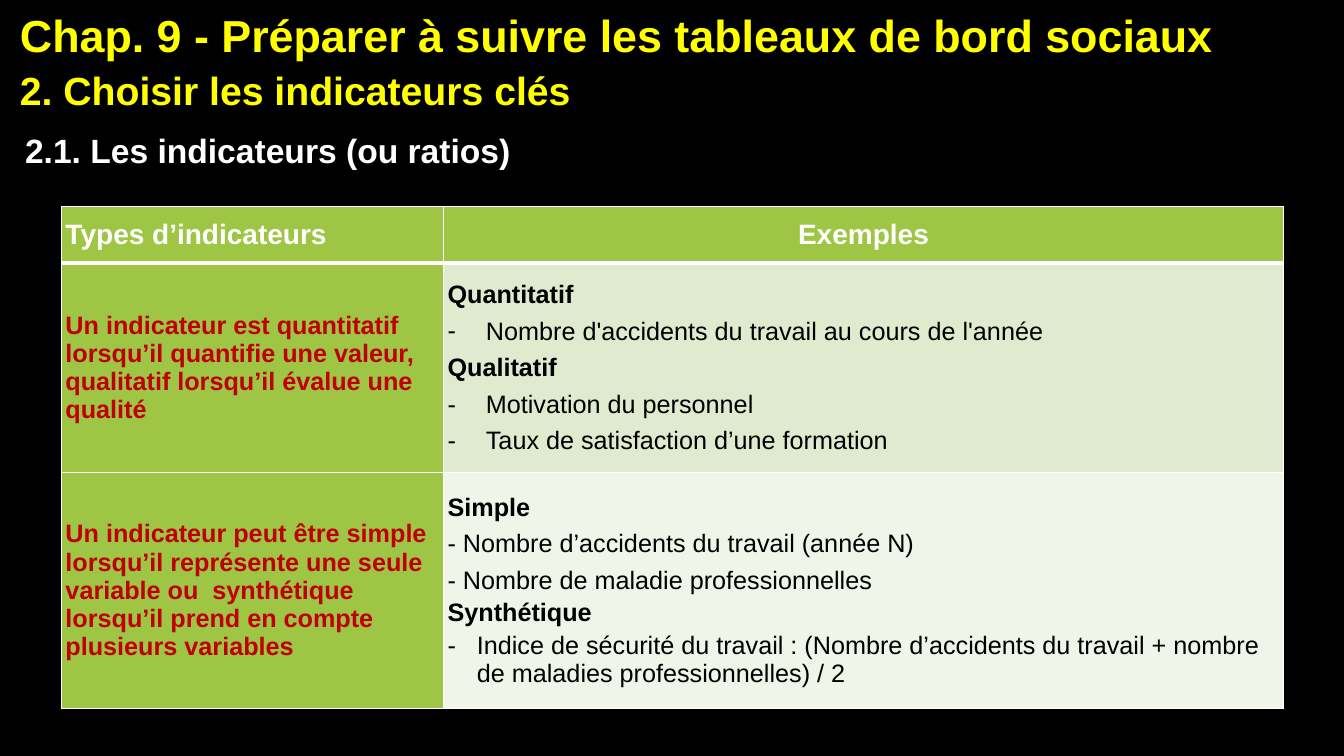
"""Build the slide on types of social indicators, with a table of examples."""
from lxml import etree
from pptx import Presentation
from pptx.dml.color import RGBColor
from pptx.enum.text import MSO_ANCHOR as ANCHOR, MSO_AUTO_SIZE as AUTO, PP_ALIGN as ALIGN
from pptx.oxml.ns import qn
from pptx.util import Inches, Pt

COLORS = {"black": "000000", "yellow": "FFFF00", "white": "FFFFFF", "red": "C00000",
          "green": "9EC544", "light": "DFEACF", "pale": "F0F5E9"}


def add_text(tf, text, size=18, color="black", bold=False, before=0, after=0,
             indent=0, bullet=False, align=ALIGN.LEFT):
    p = tf.paragraphs[0]
    if p.runs:
        p = tf.add_paragraph()
    p.alignment = align
    p.space_before, p.space_after = Pt(before), Pt(after)
    r = p.add_run()
    r.text = text
    r.font.name, r.font.size, r.font.bold = "Arial", Pt(size), bold
    r.font.color.rgb = RGBColor.from_string(COLORS[color])
    pPr = p._p.get_or_add_pPr()
    if indent:
        pPr.set("marL", str(Inches(indent)))
        pPr.set("indent", str(-Inches(indent)))
    if bullet:
        etree.SubElement(pPr, qn("a:buFont"), typeface="Arial")
        etree.SubElement(pPr, qn("a:buChar"), char="-")


def add_border(cell, position, side, width):
    ln = etree.Element(qn(f"a:ln{side}"), w=str(Pt(width)))
    fill = etree.SubElement(ln, qn("a:solidFill"))
    etree.SubElement(fill, qn("a:srgbClr"), val=COLORS["white"])
    cell._tc.get_or_add_tcPr().insert(position, ln)


prs = Presentation()
prs.slide_width, prs.slide_height = Inches(13.33), Inches(7.5)
s = prs.slides.add_slide(prs.slide_layouts[6])
s.background.fill.solid()
s.background.fill.fore_color.rgb = RGBColor.from_string(COLORS["black"])

headings = [
    ((0.1, 0.03, 12.46, 1.15), [
        ("Chap. 9 - Préparer à suivre les tableaux de bord sociaux",
         dict(size=32, color="yellow", before=3, after=3)),
        ("2. Choisir les indicateurs clés", dict(size=28, color="yellow", after=3))]),
    ((0.15, 1.24, 6.7, 0.5), [
        ("2.1. Les indicateurs (ou ratios)", dict(size=24, color="white", before=6))]),
]
for box, lines in headings:
    tf = s.shapes.add_textbox(*map(Inches, box)).text_frame
    tf.word_wrap, tf.auto_size = True, AUTO.SHAPE_TO_FIT_TEXT
    for text, style in lines:
        add_text(tf, text, bold=True, **style)

header = dict(size=20, color="white", bold=True, before=2, after=2)
kind = dict(color="red", bold=True)
title = dict(bold=True, before=3)
item = dict(before=6, after=3, indent=0.38, bullet=True)
plain = dict(before=6, indent=0.2)
rows = [
    [("green", [("Types d’indicateurs", header)]),
     ("green", [("Exemples", dict(header, align=ALIGN.CENTER))])],
    [("green", [("Un indicateur est quantitatif lorsqu’il quantifie une valeur, "
                 "qualitatif lorsqu’il évalue une qualité", dict(kind, before=3, after=3))]),
     ("light", [("Quantitatif", title),
                ("Nombre d'accidents du travail au cours de l'année", item),
                ("Qualitatif", title),
                ("Motivation du personnel", item),
                ("Taux de satisfaction d’une formation", dict(item, before=3))])],
    [("green", [("Un indicateur peut être simple lorsqu’il représente une seule variable "
                 "ou  synthétique lorsqu’il prend en compte plusieurs variables",
                 dict(kind, before=6))]),
     ("pale", [("Simple", title),
               ("- Nombre d’accidents du travail (année N)", plain),
               ("- Nombre de maladie professionnelles", plain),
               ("Synthétique", title),
               ("Indice de sécurité du travail : (Nombre d’accidents du travail + nombre "
                "de maladies professionnelles) / 2", dict(before=3, indent=0.29, bullet=True))])],
]
table = s.shapes.add_table(3, 2, *map(Inches, (0.61, 2.05, 12.12, 4.98))).table
table.first_row = table.horz_banding = False
for column, width in zip(table.columns, (3.79, 8.33)):
    column.width = Inches(width)
for row, height in zip(table.rows, (0.56, 2.08, 2.34)):
    row.height = Inches(height)

for i, row in enumerate(rows):
    for j, (fill, lines) in enumerate(row):
        cell = table.cell(i, j)
        cell.vertical_anchor = ANCHOR.MIDDLE
        cell.margin_left = cell.margin_right = Inches(0.04)
        cell.margin_top = cell.margin_bottom = 0
        cell.fill.solid()
        cell.fill.fore_color.rgb = RGBColor.from_string(COLORS[fill])
        widths = {"L": 1, "R": 1, "T": 3 if i == 1 else 1, "B": 3 if i == 0 else 1}
        for position, (side, width) in enumerate(widths.items()):
            add_border(cell, position, side, width)
        for text, style in lines:
            add_text(cell.text_frame, text, **style)

prs.save("out.pptx")
